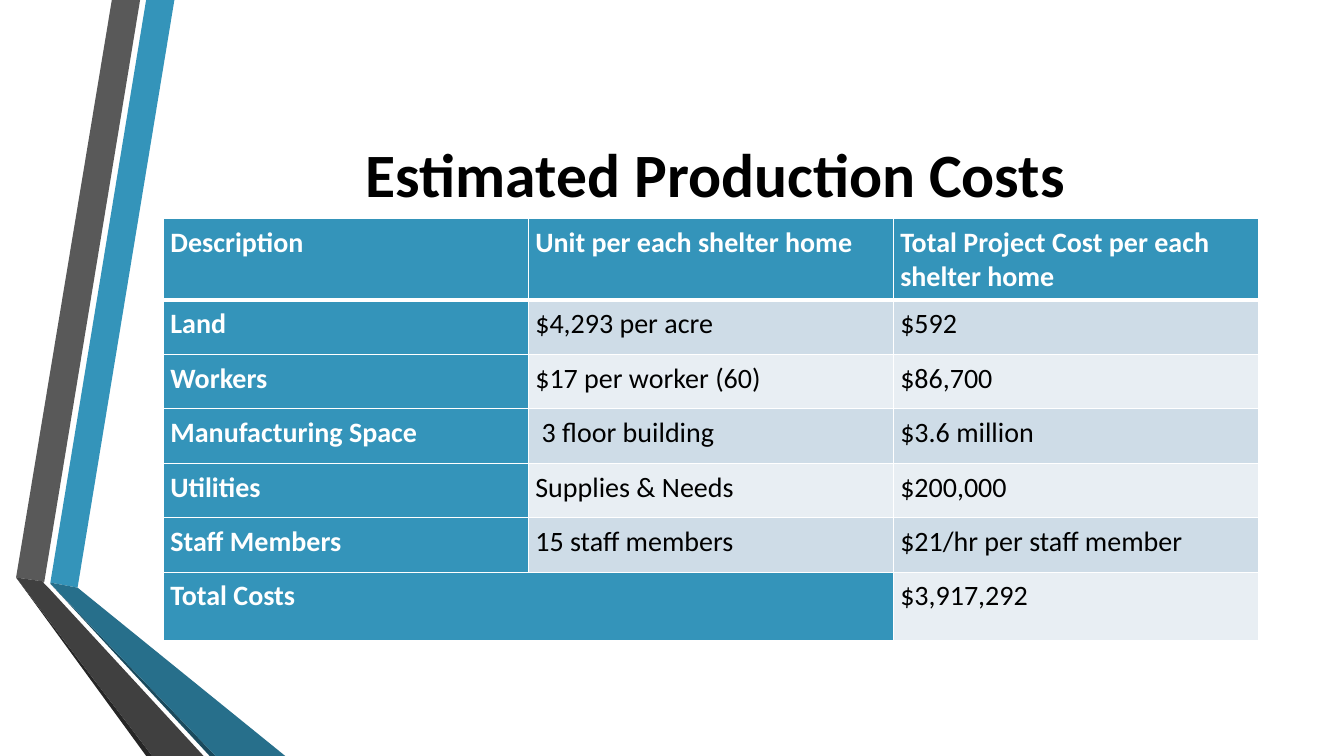
from pptx import Presentation
from pptx.dml.color import RGBColor
from pptx.enum.text import MSO_ANCHOR, PP_ALIGN
from pptx.oxml.ns import qn
from pptx.util import Pt
from lxml import etree

PX = 9144
FONT = "Calibri"
CENTER = PP_ALIGN.CENTER
LEFT = PP_ALIGN.LEFT
MIDDLE = MSO_ANCHOR.MIDDLE
TOP = MSO_ANCHOR.TOP

COLORS = {
    "blue": "3494BA",
    "deep_blue": "276F8B",
    "navy": "1A4A5D",
    "gray": "595959",
    "dark_gray": "404040",
    "charcoal": "262626",
    "band": "CEDCE7",
    "light_band": "E8EEF3",
    "white": "FFFFFF",
    "black": "000000",
}

RIBBONS = [
    ("blue", [(50, 578), (77, 583), (173, 0), (145, 0)]),
    ("gray", [(139, 0), (111, 0), (16, 573), (44, 577)]),
    ("charcoal", [(16, 573), (145, 750), (151, 750)]),
    ("navy", [(50, 579), (208, 750), (214, 750)]),
    ("deep_blue", [(50, 579), (214, 750), (283, 750), (77, 583), (50, 578)]),
    ("dark_gray", [(202, 750), (48, 583), (43, 578), (44, 577), (16, 573), (151, 750)]),
]

COSTS = [
    ("Description", "Unit per each shelter home", "Total Project Cost per each shelter home"),
    ("Land", "$4,293 per acre", "$592"),
    ("Workers", "$17 per worker (60)", "$86,700"),
    ("Manufacturing Space", " 3 floor building", "$3.6 million"),
    ("Utilities", "Supplies & Needs", "$200,000"),
    ("Staff Members", "15 staff members", "$21/hr per staff member"),
    ("Total Costs", "", "$3,917,292"),
]
COLUMN_WIDTH = 362
ROW_HEIGHTS = [72] + [54] * 5 + [68]


def rgb(name):
    return RGBColor.from_string(COLORS[name])


def write_text(frame, text, size, color, bold=False, align=LEFT, anchor=TOP):
    frame.word_wrap = True
    frame.vertical_anchor = anchor
    para = frame.paragraphs[0]
    para.alignment = align
    span = para.add_run()
    span.text = text
    span.font.name = FONT
    span.font.size = Pt(size)
    span.font.bold = bold
    span.font.color.rgb = rgb(color)


def add_ribbon(page, color, points):
    builder = page.shapes.build_freeform(*points[0], scale=PX)
    builder.add_line_segments(points[1:], close=True)
    ribbon = builder.convert_to_shape()
    ribbon.shadow.inherit = False
    ribbon.fill.solid()
    ribbon.fill.fore_color.rgb = rgb(color)
    ribbon.line.fill.background()


def add_title(page, text):
    box = page.shapes.add_textbox(162 * PX, 75 * PX, 1096 * PX, 192 * PX)
    write_text(box.text_frame, text, size=44, color="black", bold=True, align=CENTER, anchor=MIDDLE)


def set_borders(cell, top, bottom):
    properties = cell._tc.get_or_add_tcPr()
    for side, width in (("L", 1), ("R", 1), ("T", top), ("B", bottom)):
        line = etree.SubElement(properties, qn(f"a:ln{side}"), w=str(Pt(width)))
        fill = etree.SubElement(line, qn("a:solidFill"))
        etree.SubElement(fill, qn("a:srgbClr"), val=COLORS["white"])


def format_cell(cell, text, row, column):
    heading = row == 0 or column == 0
    band = "band" if row % 2 else "light_band"
    set_borders(cell, top=3 if row == 1 else 1, bottom=3 if row == 0 else 1)
    cell.fill.solid()
    cell.fill.fore_color.rgb = rgb("blue" if heading else band)
    cell.margin_left = cell.margin_right = cell.margin_top = cell.margin_bottom = 7 * PX
    if text:
        write_text(cell.text_frame, text, size=20, color="white" if heading else "black", bold=heading)


def add_cost_table(page):
    columns = len(COSTS[0])
    frame = page.shapes.add_table(
        len(COSTS), columns, 162 * PX, 217 * PX, columns * COLUMN_WIDTH * PX, sum(ROW_HEIGHTS) * PX
    )
    table = frame.table
    table.first_col = True
    for column in table.columns:
        column.width = COLUMN_WIDTH * PX
    for row, texts in enumerate(COSTS):
        table.rows[row].height = ROW_HEIGHTS[row] * PX
        for column, text in enumerate(texts):
            format_cell(table.cell(row, column), text, row, column)
    last = len(COSTS) - 1
    table.cell(last, 0).merge(table.cell(last, 1))


def main():
    deck = Presentation()
    deck.slide_width = 1333 * PX
    deck.slide_height = 750 * PX
    page = deck.slides.add_slide(deck.slide_layouts[6])
    for color, points in RIBBONS:
        add_ribbon(page, color, points)
    add_title(page, "Estimated Production Costs")
    add_cost_table(page)
    deck.save("out.pptx")


if __name__ == "__main__":
    main()
